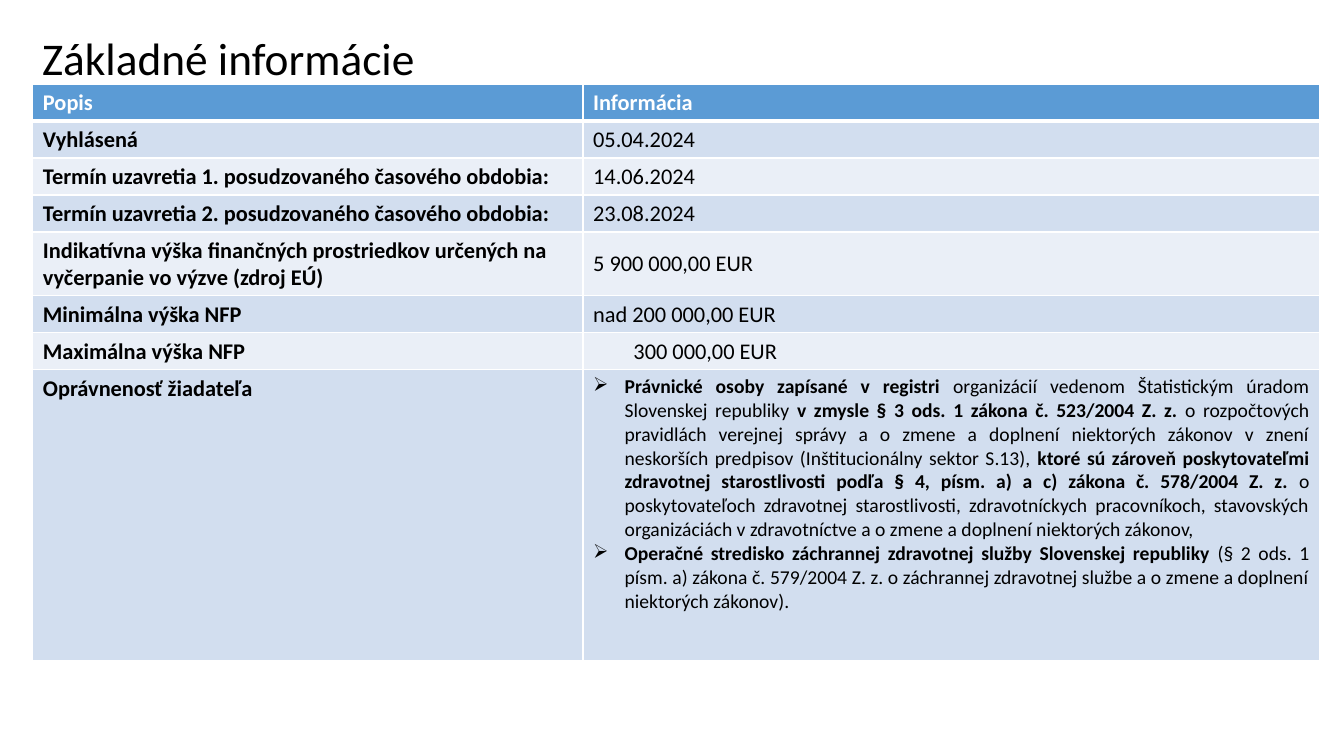
from lxml.etree import SubElement
from pptx import Presentation
from pptx.dml.color import RGBColor as RGB
from pptx.enum.text import MSO_ANCHOR as ANCHOR, PP_ALIGN as ALIGN
from pptx.oxml.ns import qn
from pptx.util import Pt

THEME = {
    "font": "Calibri",
    "text": RGB.from_string("000000"),
    "header_text": RGB.from_string("FFFFFF"),
    "header": RGB.from_string("5B9BD5"),
    "bands": [RGB.from_string("EAEFF7"), RGB.from_string("D2DEEF")],
    "border": "FFFFFF",
    "title_size": Pt(32.4),
    "cell_size": Pt(16),
    "list_size": Pt(14),
}

ROWS = [
    ("Popis", "Informácia", 26.2),
    ("Vyhlásená", "05.04.2024", 26.2),
    ("Termín uzavretia 1. posudzovaného časového obdobia:", "14.06.2024", 26.2),
    ("Termín uzavretia 2. posudzovaného časového obdobia:", "23.08.2024", 26.2),
    ("Indikatívna výška finančných prostriedkov určených na vyčerpanie vo výzve (zdroj EÚ)",
     "5 900 000,00 EUR", 44),
    ("Minimálna výška NFP", "nad 200 000,00 EUR", 26.2),
    ("Maximálna výška NFP", "300 000,00 EUR", 26.2),
    ("Oprávnenosť žiadateľa", "", 208),
]

APPLICANTS = [
    [
        ("Právnické osoby zapísané v registri ", True),
        ("organizácií vedenom Štatistickým úradom Slovenskej republiky ", False),
        ("v zmysle § 3 ods. 1 zákona č. 523/2004 Z. z. ", True),
        ("o rozpočtových pravidlách verejnej správy a o zmene a doplnení niektorých zákonov "
         "v znení neskorších predpisov (Inštitucionálny sektor S.13), ", False),
        ("ktoré sú zároveň poskytovateľmi zdravotnej starostlivosti podľa § 4, písm. a) a c) "
         "zákona č. 578/2004 Z. z. ", True),
        ("o poskytovateľoch zdravotnej starostlivosti, zdravotníckych pracovníkoch, stavovských "
         "organizáciách v zdravotníctve a o zmene a doplnení niektorých zákonov,", False),
    ],
    [
        ("Operačné stredisko záchrannej zdravotnej služby Slovenskej republiky ", True),
        ("(§ 2 ods. 1 písm. a) zákona č. 579/2004 Z. z. o záchrannej zdravotnej službe "
         "a o zmene a doplnení niektorých zákonov).", False),
    ],
]


def add_run(p, text, size, color=THEME["text"], bold=False):
    r = p.add_run()
    r.text = text
    r.font.name = THEME["font"]
    r.font.size = size
    r.font.bold = bold
    r.font.color.rgb = color


def add_border(cell, side, width):
    ln = SubElement(cell._tc.get_or_add_tcPr(), qn(f"a:ln{side}"), w=str(Pt(width)))
    fill = SubElement(ln, qn("a:solidFill"))
    SubElement(fill, qn("a:srgbClr"), val=THEME["border"])


prs = Presentation()
prs.slide_width, prs.slide_height = Pt(960), Pt(540)
s = prs.slides.add_slide(prs.slide_layouts[6])

title = s.shapes.add_textbox(Pt(23), Pt(23), Pt(720), Pt(36.7))
tf = title.text_frame
tf.word_wrap = True
tf.vertical_anchor = ANCHOR.MIDDLE
tf.margin_top = Pt(7.6)
p = tf.paragraphs[0]
p.line_spacing = 0.9
add_run(p, "Základné informácie", THEME["title_size"])

frame = s.shapes.add_table(len(ROWS), 2, Pt(23.5), Pt(60), Pt(919), Pt(411))
table = frame.table
table.columns[0].width = Pt(393)
table.columns[1].width = Pt(526)

for i, (label, value, height) in enumerate(ROWS):
    table.rows[i].height = Pt(height)
    is_header = i == 0
    for j, text in enumerate((label, value)):
        cell = table.cell(i, j)
        add_border(cell, "L", 1)
        add_border(cell, "R", 1)
        if is_header:
            add_border(cell, "T", 1)
        add_border(cell, "B", 3 if is_header else 1)
        cell.fill.solid()
        cell.fill.fore_color.rgb = THEME["header"] if is_header else THEME["bands"][i % 2]
        if text:
            add_run(cell.text_frame.paragraphs[0], text, THEME["cell_size"],
                    THEME["header_text"] if is_header else THEME["text"],
                    is_header or j == 0)

for cell in table.rows[4].cells:
    cell.vertical_anchor = ANCHOR.MIDDLE
table.cell(6, 1).margin_left = Pt(36)

tf = table.cell(7, 1).text_frame
for i, runs in enumerate(APPLICANTS):
    p = tf.add_paragraph() if i else tf.paragraphs[0]
    p.alignment = ALIGN.JUSTIFY
    pPr = p._p.get_or_add_pPr()
    pPr.set("marL", str(Pt(22.5)))
    pPr.set("indent", str(-Pt(22.5)))
    SubElement(pPr, qn("a:buChar"), char="➢")
    for text, bold in runs:
        add_run(p, text, THEME["list_size"], bold=bold)

prs.save("out.pptx")
